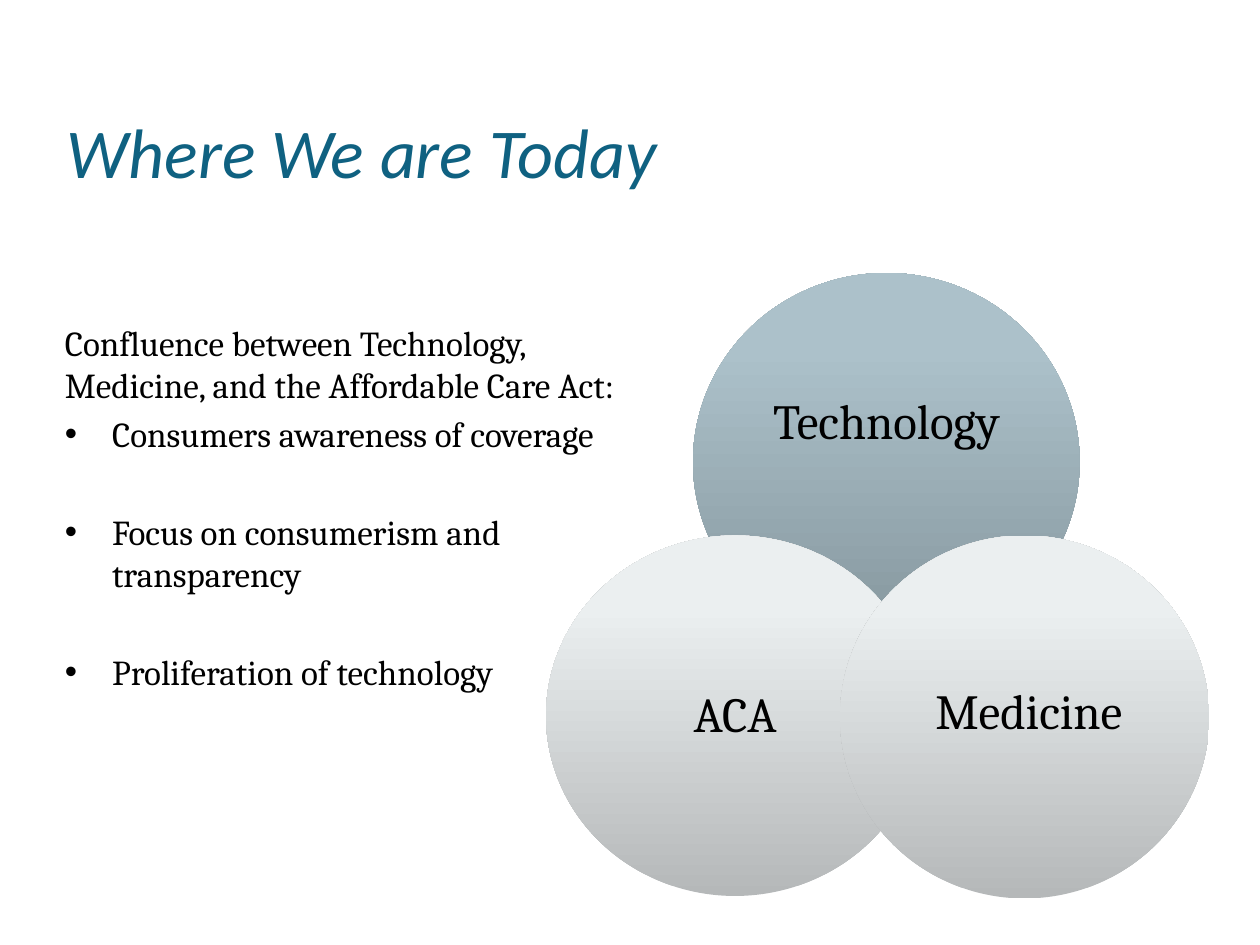
from copy import deepcopy
from dataclasses import dataclass

from lxml.etree import SubElement
from pptx import Presentation
from pptx.dml.color import RGBColor
from pptx.enum.shapes import MSO_SHAPE
from pptx.enum.text import MSO_ANCHOR, PP_ALIGN
from pptx.oxml.ns import qn
from pptx.util import Pt

COLORS = {
    "title": "0F6181",
    "text": "000000",
    "blue_dark": "84959C",
    "blue_mid": "ACC1CA",
    "blue_light": "ACC2CC",
    "gray_dark": "B5B8B9",
    "gray_mid": "EBEFF0",
    "gray_light": "ECF0F1",
}
BLUE = ("blue_dark", "blue_mid", "blue_light")
GRAY = ("gray_dark", "gray_mid", "gray_light")
STOP_POSITIONS = (0, 0.8, 1)
BULLET_INDENT = 27


@dataclass
class Box:
    left: float
    top: float
    width: float
    height: float

    def lengths(self) -> tuple:
        return Pt(self.left), Pt(self.top), Pt(self.width), Pt(self.height)


@dataclass
class Circle:
    label: str
    outline: Box
    label_box: Box
    shades: tuple


@dataclass
class Bullet:
    text: str
    space_before: float


CIRCLES = (
    Circle("Technology", Box(396, 156, 221, 216), Box(425.5, 193.7, 162, 97.2), BLUE),
    Circle("ACA", Box(312, 306, 216, 206), Box(360.7, 352.8, 118.8, 113), GRAY),
    Circle("Medicine", Box(480, 306, 211, 207.4), Box(525.6, 350.6, 124.6, 114.5), GRAY),
)
BULLETS = (
    Bullet("Consumers awareness of coverage", 4),
    Bullet("Focus on consumerism and transparency", 32),
    Bullet("Proliferation of technology", 32),
)


def rgb(name: str) -> RGBColor:
    return RGBColor.from_string(COLORS[name])


def add_text_frame(slide, box: Box, anchor=MSO_ANCHOR.TOP):
    text_frame = slide.shapes.add_textbox(*box.lengths()).text_frame
    text_frame.word_wrap = True
    text_frame.vertical_anchor = anchor
    return text_frame


def set_text(paragraph, text: str, font_name: str, size: float, color: str) -> None:
    paragraph.text = text
    paragraph.font.name = font_name
    paragraph.font.size = Pt(size)
    paragraph.font.color.rgb = rgb(color)


def add_bullet_mark(paragraph) -> None:
    properties = paragraph._p.get_or_add_pPr()
    properties.set("marL", str(Pt(BULLET_INDENT)))
    properties.set("indent", str(-Pt(BULLET_INDENT)))
    SubElement(properties, qn("a:buFont")).set("typeface", "Arial")
    SubElement(properties, qn("a:buChar")).set("char", "•")


def fill_upward(shape, shades: tuple) -> None:
    """Fill with a three-stop gradient that runs from bottom to top."""
    shape.fill.gradient()
    shape.fill.gradient_angle = 90
    stop_list = shape._element.spPr.find(".//" + qn("a:gsLst"))
    stop_list.append(deepcopy(stop_list[-1]))
    for stop, shade, position in zip(shape.fill.gradient_stops, shades, STOP_POSITIONS):
        stop.color.rgb = rgb(shade)
        stop.position = position


def add_circle(slide, circle: Circle) -> None:
    shape = slide.shapes.add_shape(MSO_SHAPE.OVAL, *circle.outline.lengths())
    shape.shadow.inherit = False
    shape.line.fill.background()
    fill_upward(shape, circle.shades)

    text_frame = add_text_frame(slide, circle.label_box, MSO_ANCHOR.MIDDLE)
    text_frame.margin_left = text_frame.margin_right = Pt(0)
    text_frame.margin_top = text_frame.margin_bottom = Pt(0)
    paragraph = text_frame.paragraphs[0]
    paragraph.alignment = PP_ALIGN.CENTER
    paragraph.line_spacing = 0.9
    set_text(paragraph, circle.label, "Cambria", 28, "text")


def add_title(slide) -> None:
    text_frame = add_text_frame(slide, Box(31, 41, 660, 90), MSO_ANCHOR.MIDDLE)
    paragraph = text_frame.paragraphs[0]
    set_text(paragraph, "Where We are Today", "Calibri", 40, "title")
    paragraph.font.italic = True


def add_body(slide) -> None:
    text_frame = add_text_frame(slide, Box(30, 180, 330, 306))
    introduction = "Confluence between Technology, Medicine, and the Affordable Care Act:"
    set_text(text_frame.paragraphs[0], introduction, "Cambria", 20, "text")
    for bullet in BULLETS:
        paragraph = text_frame.add_paragraph()
        add_bullet_mark(paragraph)
        paragraph.space_before = Pt(bullet.space_before)
        set_text(paragraph, bullet.text, "Cambria", 20, "text")


def main() -> None:
    presentation = Presentation()
    presentation.slide_width, presentation.slide_height = Pt(720), Pt(540)
    slide = presentation.slides.add_slide(presentation.slide_layouts[6])
    add_title(slide)
    add_body(slide)
    for circle in CIRCLES:
        add_circle(slide, circle)
    presentation.save("out.pptx")


if __name__ == "__main__":
    main()
